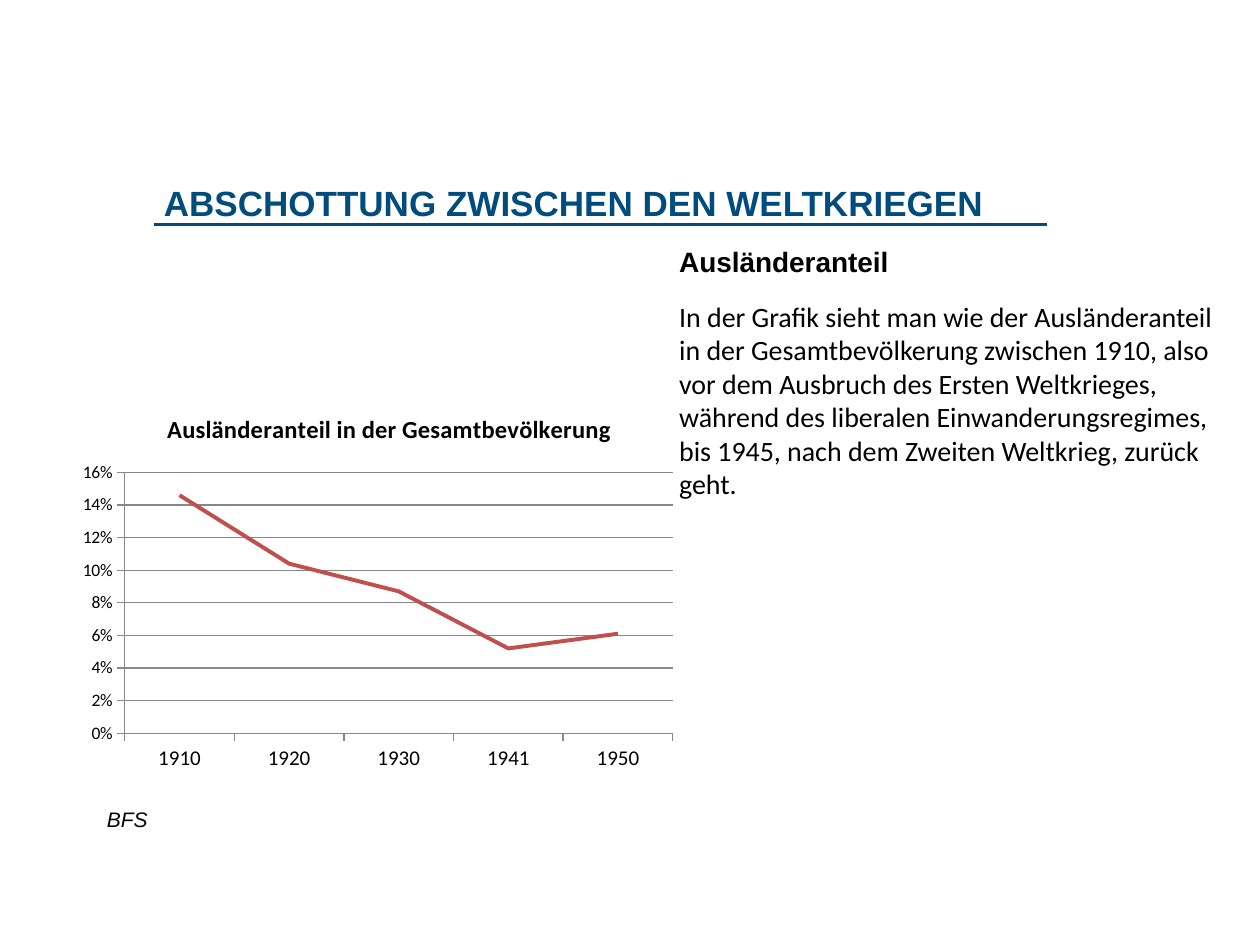
from dataclasses import dataclass
from typing import Any

from lxml.etree import SubElement
from pptx import Presentation
from pptx.chart.data import CategoryChartData
from pptx.dml.color import RGBColor
from pptx.enum.chart import XL_CHART_TYPE, XL_TICK_MARK
from pptx.enum.shapes import MSO_CONNECTOR
from pptx.oxml import parse_xml
from pptx.oxml.ns import nsdecls, qn
from pptx.util import Emu, Inches, Pt

WIDE, HIGH = Inches(10), Inches(7.5)
COLS, ROWS = 100, 75
BLUE, BLACK, RED, GREY = "004C7D", "000000", "C0504D", "878787"


@dataclass
class Para:
    text: str
    style: dict[str, Any]
    color: str = BLACK
    gap: float = 0


@dataclass
class Block:
    area: tuple[float, float, float, float]
    paras: list[Para]
    inset: bool = False


def col(n: float) -> Emu:
    return Emu(round(WIDE * n / COLS))


def row(n: float) -> Emu:
    return Emu(round(HIGH * n / ROWS))


def place(area: tuple[float, float, float, float]) -> tuple[Emu, ...]:
    x, y, w, h = area
    return col(x), row(y), col(w), row(h)


def paint(target: Any, color: str) -> None:
    target.rgb = RGBColor.from_string(color)


def apply(target: Any, style: dict[str, Any]) -> None:
    for key, value in style.items():
        setattr(target, key, value)


def face(name: str, size: float, **more: Any) -> dict[str, Any]:
    return {"name": name, "size": Pt(size), **more}


def write(slide: Any, block: Block) -> None:
    frame = slide.shapes.add_textbox(*place(block.area)).text_frame
    frame.word_wrap = True
    if not block.inset:
        sides = ("left", "top", "right", "bottom")
        apply(frame, {f"margin_{side}": 0 for side in sides})
    for i, item in enumerate(block.paras):
        para = frame.add_paragraph() if i else frame.paragraphs[0]
        if item.gap:
            para.space_before = Pt(item.gap)
        run = para.add_run()
        run.text = item.text
        apply(run.font, item.style)
        paint(run.font.color, item.color)


def rule(slide: Any, left: float, right: float, y: float) -> None:
    line = slide.shapes.add_connector(
        MSO_CONNECTOR.STRAIGHT, col(left), row(y), col(right), row(y))
    line.line.width = Pt(2)
    paint(line.line.color, BLUE)
    SubElement(line._element.spPr, qn("a:effectLst"))


def stroke(line: Any, color: str, width: float) -> None:
    line.width = Pt(width)
    paint(line.color, color)


def fix_plot(chart: Any, **share: float) -> None:
    area = chart._chartSpace.chart.plotArea
    for old in area.findall(qn("c:layout")):
        area.remove(old)
    modes = '<c:xMode val="edge"/><c:yMode val="edge"/>'
    sizes = "".join(f'<c:{k} val="{v}"/>' for k, v in share.items())
    area.insert(0, parse_xml(
        f'<c:layout {nsdecls("c")}><c:manualLayout>'
        f'<c:layoutTarget val="inner"/>{modes}{sizes}'
        "</c:manualLayout></c:layout>"))


def plot(slide: Any, area: tuple[float, float, float, float],
         title: str, points: dict[str, float]) -> None:
    data = CategoryChartData(number_format="0.0%")
    data.categories = list(points)
    data.add_series("Ausländeranteil", list(points.values()))
    chart = slide.shapes.add_chart(
        XL_CHART_TYPE.LINE, *place(area), data).chart
    chart.has_legend = False
    apply(chart.font, face("Calibri", 10))
    paint(chart.font.color, BLACK)

    chart.has_title = True
    run = chart.chart_title.text_frame.paragraphs[0].add_run()
    run.text = title
    apply(run.font, face("Calibri", 14, bold=True))
    paint(run.font.color, BLACK)

    years, rates = chart.category_axis, chart.value_axis
    for axis, size in ((years, 12), (rates, 10)):
        apply(axis, {"major_tick_mark": XL_TICK_MARK.OUTSIDE,
                     "minor_tick_mark": XL_TICK_MARK.NONE})
        apply(axis.tick_labels.font, face("Calibri", size))
        stroke(axis.format.line, GREY, 0.75)
    apply(rates, {"minimum_scale": 0, "maximum_scale": 0.16,
                  "major_unit": 0.02, "has_major_gridlines": True})
    apply(rates.tick_labels, {"number_format": "0%",
                              "number_format_is_linked": False})
    stroke(rates.major_gridlines.format.line, GREY, 0.75)

    chart.plots[0].vary_by_categories = False
    series = chart.plots[0].series[0]
    series.smooth = False
    stroke(series.format.line, RED, 2.25)
    fix_plot(chart, x=0.08, y=0.21, w=0.87, h=0.69)


def main() -> None:
    deck = Presentation()
    apply(deck, {"slide_width": WIDE, "slide_height": HIGH})
    slide = deck.slides.add_slide(deck.slide_layouts[6])
    blocks = [
        Block((53.9, 19.4, 42.5, 20.5), [
            Para("Ausländeranteil", face("Arial", 16, bold=True)),
            Para("In der Grafik sieht man wie der Ausländeranteil in der "
                 "Gesamtbevölkerung zwischen 1910, also vor dem Ausbruch des "
                 "Ersten Weltkrieges, während des liberalen "
                 "Einwanderungsregimes, bis 1945, nach dem Zweiten "
                 "Weltkrieg, zurück geht.", face("Calibri", 16), gap=12),
        ]),
        Block((7.5, 63.5, 43.6, 3),
              [Para("BFS", face("Arial", 12, italic=True))], inset=True),
        Block((13, 14.4, 70.1, 3.4),
              [Para("ABSCHOTTUNG ZWISCHEN DEN WELTKRIEGEN",
                    face("Arial", 20, bold=True), BLUE)]),
    ]
    for block in blocks:
        write(slide, block)
    plot(slide, (5.9, 31.2, 50, 30), "Ausländeranteil in der Gesamtbevölkerung",
         {"1910": 0.146, "1920": 0.104, "1930": 0.087,
          "1941": 0.052, "1950": 0.061})
    rule(slide, 12.2, 83.1, 17.8)
    deck.save("out.pptx")


if __name__ == "__main__":
    main()
